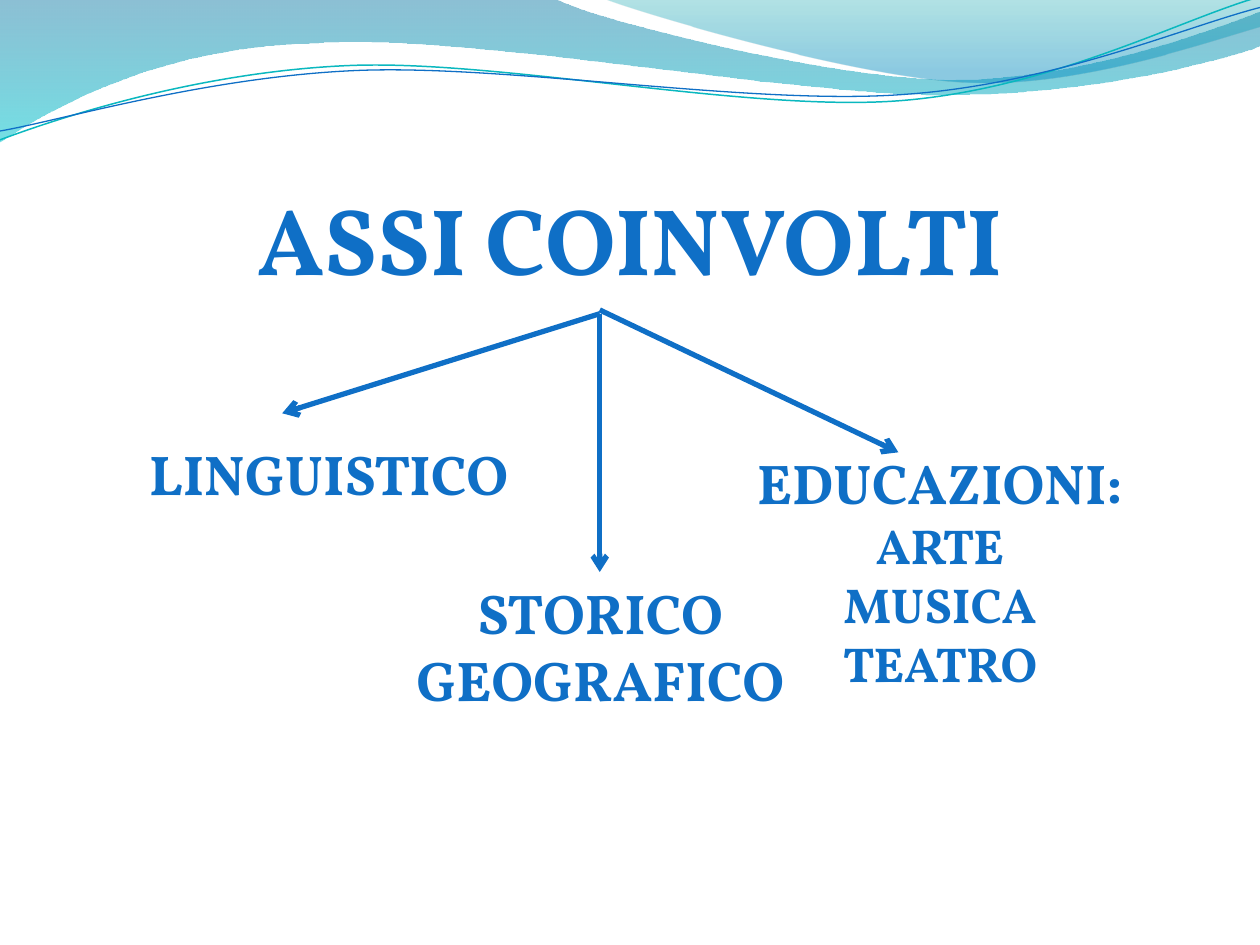
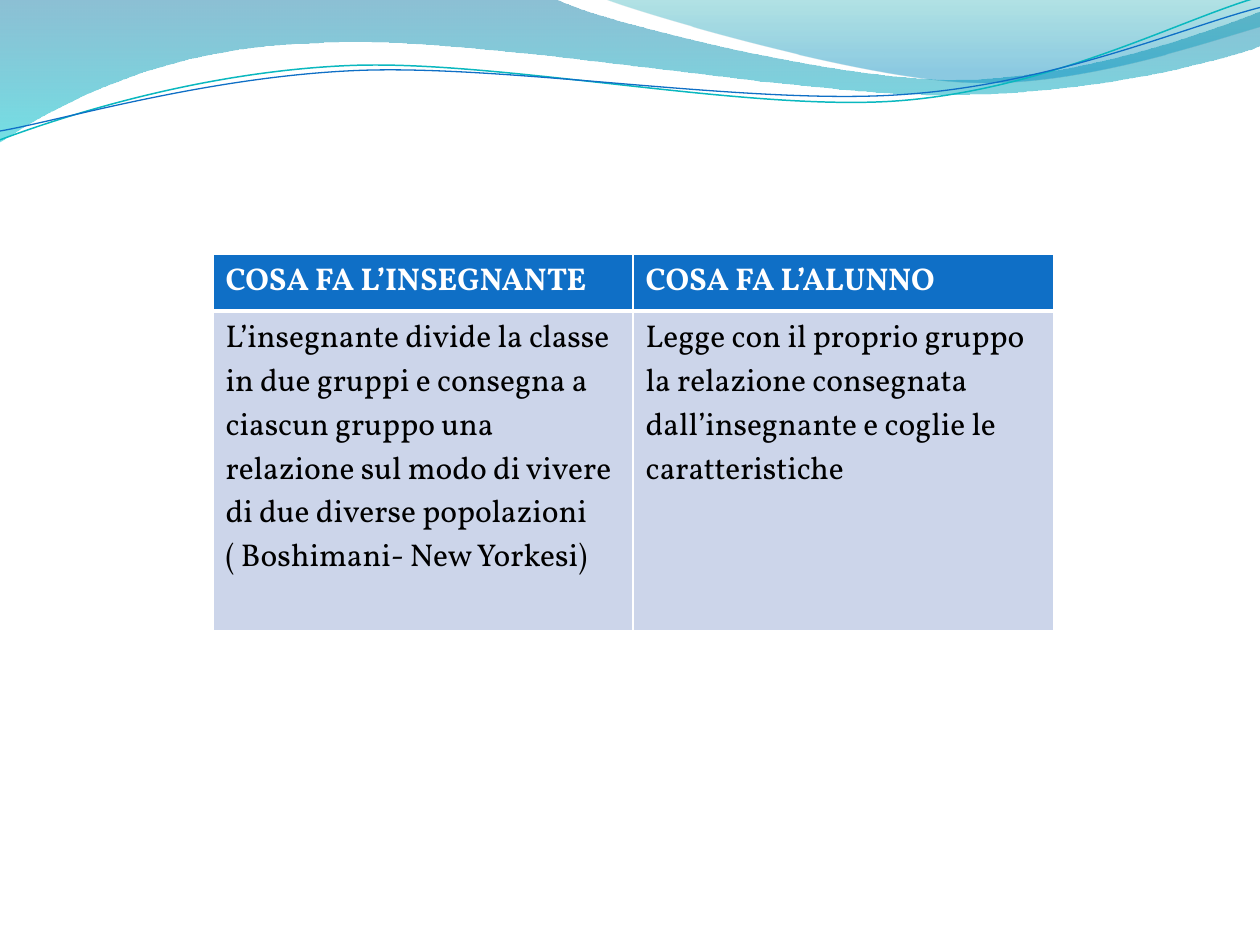
from math import cos, radians, sin
from lxml import etree
from pptx import Presentation
from pptx.dml.color import RGBColor
from pptx.enum.shapes import MSO_CONNECTOR
from pptx.enum.text import MSO_AUTO_SIZE, PP_ALIGN
from pptx.oxml.ns import qn
from pptx.util import Inches, Pt

STRAIGHT = MSO_CONNECTOR.STRAIGHT
CENTER = PP_ALIGN.CENTER
GROW = MSO_AUTO_SIZE.SHAPE_TO_FIT_TEXT

FONT = "Vollkorn"
BLUE = RGBColor(0x0F, 0x6F, 0xC6)
TEAL = RGBColor(0x0A, 0xB8, 0xBF)
PALE = RGBColor(0xCC, 0xD5, 0xEA)
WHITE = RGBColor(0xFF, 0xFF, 0xFF)
BLACK = RGBColor(0, 0, 0)
DEEP = RGBColor(0, 0x74, 0xA1)
AQUA = RGBColor(0, 0xC6, 0xCF)
SEA = RGBColor(0, 0xA1, 0xA9)
SKY = RGBColor(0, 0x8B, 0xBF)

WIDE, HIGH = 10, 7.5
TURN = 357.3  # rotation of the waves, degrees

# Outlines: a pair is a straight step, six numbers are a cubic curve.
# Bands: outline, then gradient stops as (position, colour, opacity %).
BANDS = [
    ([(0, 0), (4.4, -0.01), (4.76, 0.17, 6.64, 0.63, 7.58, 0.63),
      (8.53, 0.63, 9.58, 0.26, 10, 0.09), (10.01, 0.36),
      (9.83, 0.44, 8.7, 0.76, 7.46, 0.75),
      (6.22, 0.75, 3.82, 0.28, 2.57, 0.34),
      (1.29, 0.36, 0.46, 0.83, -0.01, 1.13)],
     [(0, DEEP, 45), (1, AQUA, 55)]),
    ([(4.79, -0.01), (5.09, 0.11, 6.82, 0.62, 7.69, 0.65),
      (8.56, 0.69, 9.61, 0.32, 10, 0.21), (10, 0)],
     [(0, SEA, 30), (0.8, SKY, 45)]),
]
# Waves: outline as seen, centre of rotation, colour, width in points
WAVES = [
    ([(0, 1.11), (0.48, 0.93, 1.58, 0.57, 2.77, 0.52),
      (3.95, 0.47, 5.93, 0.89, 7.13, 0.8),
      (8.33, 0.71, 9.38, 0.15, 9.98, -0.02)], (4.99, 0.58), TEAL, 0.85),
    ([(0, 1.04), (0.47, 0.96, 1.64, 0.61, 2.83, 0.56),
      (4.03, 0.51, 5.97, 0.84, 7.17, 0.75),
      (8.36, 0.67, 9.41, 0.21, 10, 0.06)], (5, 0.59), BLUE, 0.75),
]

# Labels: box (left, top, width, height), then lines with their sizes
LABELS = [
    ((1.81, 1.39, 6.38, 1.01), [("ASSI COINVOLTI", 54)]),
    ((0.98, 3.44, 3.26, 0.64), [("LINGUISTICO", 32)]),
    ((3.14, 4.54, 3.25, 1.18), [("STORICO", 32), ("GEOGRAFICO", 32)]),
    ((5.8, 3.51, 3.32, 2.05), [("EDUCAZIONI:", 32), ("ARTE", 28),
                               ("MUSICA", 28), ("TEATRO", 28)]),
]
HUB = 4.76
ARROWS = [(2.49, 2.24, 3.28), (2.49, HUB, 4.54), (2.46, 7.13, 3.59)]

TABLE = [
    ("COSA FA L’INSEGNANTE", "COSA FA L’ALUNNO"),
    ("L’insegnante divide la classe in due gruppi e consegna a ciascun gruppo "
     "una relazione sul modo di vivere di due diverse popolazioni "
     "( Boshimani- New Yorkesi)",
     "Legge con il proprio gruppo la relazione consegnata dall’insegnante "
     "e coglie le caratteristiche"),
]
LEFT, TOP, SPAN = 1.69, 2.02, 6.67
# Row styles: height, fill, font colour, bold, top and bottom border
ROWS = [(0.41, BLUE, WHITE, True, 1, 3), (2.54, PALE, BLACK, False, 3, 1)]


def spin(path, hub):
    """Undo the rotation TURN about hub for every point of an outline."""
    a = radians(-TURN)
    out = []
    for step in path:
        new = []
        for x, y in zip(step[::2], step[1::2]):
            dx, dy = x - hub[0], y - hub[1]
            new += [hub[0] + dx * cos(a) - dy * sin(a),
                    hub[1] + dx * sin(a) + dy * cos(a)]
        out.append(new)
    return out


def draw(slide, path, close):
    """Draw an outline; triples of line steps become cubic curves."""
    dots = [(Inches(x), Inches(y)) for step in path
            for x, y in zip(step[::2], step[1::2])]
    pen = slide.shapes.build_freeform(*dots[0])
    pen.add_line_segments(dots[1:], close=close)
    shape = pen.convert_to_shape()
    shape.shadow.inherit = False
    lines = iter(shape._element.findall(".//" + qn("a:lnTo")))
    for step in path[1:]:
        first = next(lines)
        if len(step) == 6:
            curve = etree.Element(qn("a:cubicBezTo"))
            first.addprevious(curve)
            for line in (first, next(lines), next(lines)):
                curve.append(line[0])
                line.getparent().remove(line)
    return shape


def add_waves(slide, layout):
    """Draw the header once and move it to the layout that slides share."""
    shapes = []
    for path, stops in BANDS:
        band = draw(slide, path, True)
        band.line.fill.background()
        band.fill.gradient()
        band.fill.gradient_angle = 270
        for stop, (pos, tint, _) in zip(band.fill.gradient_stops, stops):
            stop.position = pos
            stop.color.rgb = tint
        tints = band._element.spPr.findall(".//" + qn("a:srgbClr"))
        for node, (_, _, part) in zip(tints, stops):
            etree.SubElement(node, qn("a:alpha"), val=str(part * 1000))
        shapes.append(band)
    for path, hub, tint, width in WAVES:
        wave = draw(slide, spin(path, hub), False)
        wave.rotation = TURN
        wave.fill.background()
        wave.line.color.rgb = tint
        wave.line.width = Pt(width)
        shapes.append(wave)
    for shape in shapes:
        layout.shapes._spTree.append(shape._element)


def style(para, size, tint, bold):
    for run in para.runs:
        font = run.font
        font.name, font.size, font.bold = FONT, Pt(size), bold
        font.color.rgb = tint


def add_label(slide, box, lines):
    frame = slide.shapes.add_textbox(*map(Inches, box)).text_frame
    frame.word_wrap = False
    frame.auto_size = GROW
    frame.text = "\n".join(text for text, _ in lines)
    for para, (_, size) in zip(frame.paragraphs, lines):
        para.alignment = CENTER
        style(para, size, BLUE, True)


def add_arrow(slide, *ends):
    link = slide.shapes.add_connector(STRAIGHT, *map(Inches, ends))
    link.line.color.rgb = BLUE
    link.line.width = Pt(3)
    etree.SubElement(link.line._get_or_add_ln(), qn("a:tailEnd"), type="arrow")
    etree.SubElement(link._element.spPr, qn("a:effectLst"))


def add_edge(cell, side, width):
    edge = etree.SubElement(cell._tc.get_or_add_tcPr(), qn("a:ln" + side),
                            w=str(Pt(width)))
    fill = etree.SubElement(edge, qn("a:solidFill"))
    etree.SubElement(fill, qn("a:srgbClr"), val=str(WHITE))


def add_grid(slide):
    tall = sum(row[0] for row in ROWS)
    box = map(Inches, (LEFT, TOP, SPAN, tall))
    grid = slide.shapes.add_table(len(TABLE), len(TABLE[0]), *box).table
    for r, (high, fill, tint, bold, top, low) in enumerate(ROWS):
        grid.rows[r].height = Inches(high)
        for c, text in enumerate(TABLE[r]):
            cell = grid.cell(r, c)
            for side, width in zip("LRTB", (1, 1, top, low)):
                add_edge(cell, side, width)
            cell.fill.solid()
            cell.fill.fore_color.rgb = fill
            cell.text_frame.text = text
            style(cell.text_frame.paragraphs[0], 18, tint, bold)


def main():
    prs = Presentation()
    prs.slide_width, prs.slide_height = Inches(WIDE), Inches(HIGH)
    blank = prs.slide_layouts[6]
    axes, tasks = (prs.slides.add_slide(blank) for _ in range(2))
    add_waves(axes, blank)
    for start, x, y in ARROWS:
        add_arrow(axes, HUB, start, x, y)
    for box, lines in LABELS:
        add_label(axes, box, lines)
    add_grid(tasks)
    prs.save("out.pptx")


if __name__ == "__main__":
    main()
